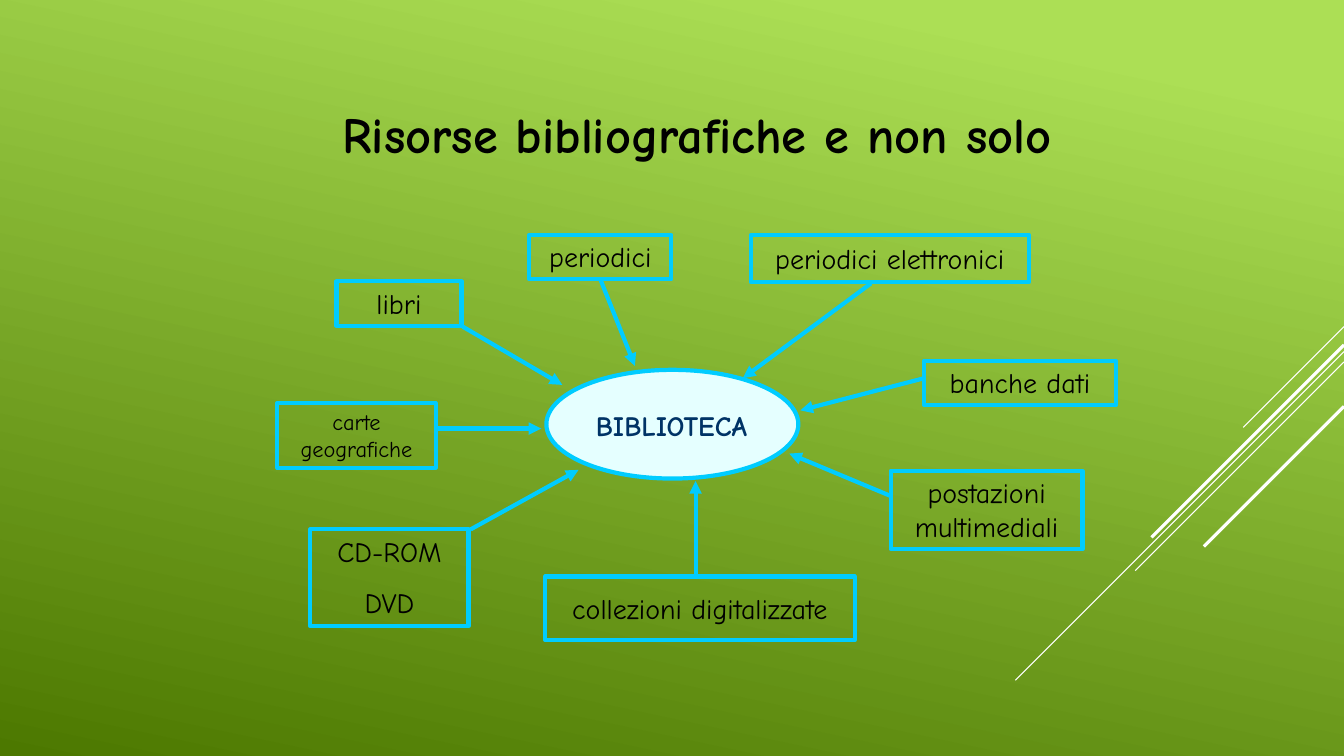
from pptx import Presentation
from pptx.dml.color import RGBColor
from pptx.enum.shapes import MSO_CONNECTOR, MSO_SHAPE
from pptx.enum.text import MSO_ANCHOR, PP_ALIGN
from pptx.oxml.ns import qn
from pptx.util import Cm, Pt
from lxml import etree

STRAIGHT = MSO_CONNECTOR.STRAIGHT
RECTANGLE, OVAL = MSO_SHAPE.RECTANGLE, MSO_SHAPE.OVAL
TOP, MIDDLE, BOTTOM = MSO_ANCHOR.TOP, MSO_ANCHOR.MIDDLE, MSO_ANCHOR.BOTTOM
CENTER = PP_ALIGN.CENTER
TITLE_ONLY = 5
BOTTOM_SIDE = 2
WIDTH, HEIGHT = 33.87, 19.05

# text, box (left, top, width, height), arrow start, arrow end, size, anchor
RESOURCES = [
    ("periodici", (13.34, 5.92, 3.58, 1.12), (15.21, 7.06), (16, 9.22), 20, TOP),
    ("libri", (8.48, 7.09, 3.15, 1.12), (11.66, 8.23), (14.17, 9.7), 20, TOP),
    ("carte geografiche", (6.99, 10.16, 3.99, 1.63), (11, 10.8), (13.64, 10.8), 16, TOP),
    ("CD-ROM\nDVD", (7.82, 13.34, 3.99, 2.44), (11.86, 13.34), (14.58, 11.84), 20, TOP),
    ("banche dati", (23.29, 9.09, 4.83, 1.12), (23.29, 9.53), (20.17, 10.34), 20, TOP),
    ("postazioni multimediali", (22.45, 11.86, 4.83, 1.98), (22.45, 12.5), (19.89, 11.43), 20, TOP),
    ("periodici elettronici", (18.92, 5.92, 7.01, 1.19), (21.95, 7.14), (18.72, 9.53), 20, MIDDLE),
    ("collezioni digitalizzate", (13.74, 14.53, 7.8, 1.6), (17.53, 14.55), (17.53, 12.12), 20, MIDDLE),
]

# top at the right edge, run to the lower left, line width
DIAGONALS = [
    (8.23, 2.54, 0.75), (8.86, 8.28, 0.75), (9.12, 5.26, 0.75),
    (8.69, 4.85, 2.25), (10.24, 3.53, 2.25),
]


def color(value):
    return RGBColor.from_string(value)


class Page:
    """Holds the style and the current slide."""

    font = "Comic Neue"
    accent = "00CCFF"
    ink = "000000"
    border = 3

    def __init__(self, slide):
        self.slide = slide
        self.shapes = slide.shapes

    def background(self, start, end, angle):
        fill = self.slide.background.fill
        fill.gradient()
        fill.gradient_angle = angle
        for stop, (position, value) in zip(fill.gradient_stops, (start, end)):
            stop.position = position
            stop.color.rgb = color(value)

    def set_text(self, shape, text, size, anchor, ink=ink, bold=False, before=0):
        frame = shape.text_frame
        frame.text = text
        frame.word_wrap = anchor != MIDDLE
        frame.vertical_anchor = anchor
        for paragraph in frame.paragraphs:
            paragraph.alignment = CENTER
            paragraph.space_before = Pt(before)
            for span in paragraph.runs:
                span.font.name = self.font
                span.font.size = Pt(size)
                span.font.bold = bold
                span.font.color.rgb = color(ink)

    def title(self, text, place, size):
        title = self.shapes.title
        title.left, title.top, title.width, title.height = map(Cm, place)
        self.set_text(title, text, size, BOTTOM, bold=True)

    def shape(self, kind, place, fill=None):
        shape = self.shapes.add_shape(kind, *map(Cm, place))
        shape.shadow.inherit = False
        if fill:
            shape.fill.solid()
            shape.fill.fore_color.rgb = color(fill)
        else:
            shape.fill.background()
        shape.line.color.rgb = color(self.accent)
        shape.line.width = Pt(self.border)
        return shape

    def label(self, text, place, size, ink):
        box = self.shapes.add_textbox(*map(Cm, place))
        self.set_text(box, text, size, TOP, ink, bold=True)

    def line(self, start, end, value, width):
        line = self.shapes.add_connector(STRAIGHT, *map(Cm, start + end))
        line.line.color.rgb = color(value)
        line.line.width = Pt(width)
        etree.SubElement(line.element.spPr, qn("a:effectLst"))
        return line

    def arrow(self, start, end):
        arrow = self.line(start, end, self.accent, self.border)
        outline = arrow.element.spPr.find(qn("a:ln"))
        etree.SubElement(outline, qn("a:tailEnd"), type="triangle")
        return arrow


def main():
    deck = Presentation()
    deck.slide_width, deck.slide_height = Cm(WIDTH), Cm(HEIGHT)
    page = Page(deck.slides.add_slide(deck.slide_layouts[TITLE_ONLY]))
    page.background((0.1, "ACDF55"), (1, "4C7800"), 258)

    for top, run, width in DIAGONALS:
        page.line((WIDTH, top), (WIDTH - run, top + run), "FFFFFF", width)

    page.title("Risorse bibliografiche e non solo", (6.35, 1.32, 22.43, 2.92), 36)
    page.shape(OVAL, (13.77, 9.32, 6.35, 2.74), "E5FFFF")
    page.label("BIBLIOTECA", (14.17, 10.16, 5.51, 1.12), 20, "003366")

    for text, place, start, end, size, anchor in RESOURCES:
        box = page.shape(RECTANGLE, place)
        page.set_text(box, text, size, anchor, before=12.5 if anchor == TOP else 0)
        arrow = page.arrow(start, end)
        if text == "periodici":
            arrow.begin_connect(box, BOTTOM_SIDE)

    deck.save("out.pptx")


if __name__ == "__main__":
    main()
